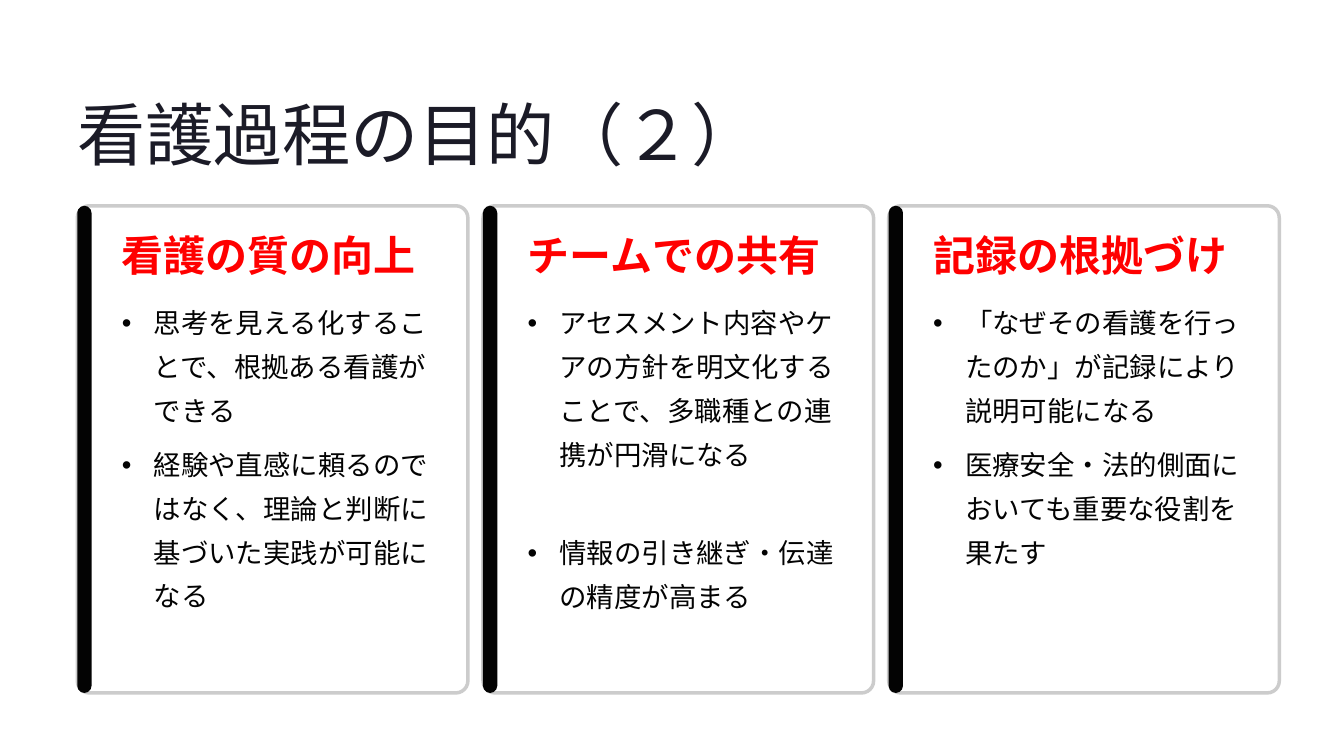
from dataclasses import dataclass

from lxml.etree import SubElement
from pptx import Presentation
from pptx.dml.color import RGBColor
from pptx.enum.shapes import MSO_SHAPE
from pptx.enum.text import MSO_ANCHOR, MSO_AUTO_SIZE, PP_ALIGN
from pptx.oxml.ns import qn
from pptx.shapes.autoshape import Shape
from pptx.slide import Slide
from pptx.text.text import TextFrame
from pptx.util import Inches, Pt

COLORS = {"title": "1B1B27", "heading": "FF0000", "ink": "030303",
          "card": "FFFFFF", "border": "CCCCCC"}
CARD_LEFT, CARD_TOP, CARD_PITCH = 0.92, 2.45, 4.83
CARD_WIDTH, CARD_HEIGHT, BAR_WIDTH = 4.65, 5.8, 0.17
TEXT_INSET, TEXT_WIDTH = 0.53, 3.72


@dataclass(frozen=True)
class TextStyle:
    font: str
    size: float
    line: float
    color: str
    bold: bool = False


@dataclass(frozen=True)
class Card:
    heading: str
    points: tuple[str, ...]
    gap: float
    placeholder: int


TITLE = TextStyle("Inter", 58.5, 73.5, "title")
HEADING = TextStyle("Inter", 36, 36.5, "heading", True)
BODY = TextStyle("Cabin", 23.5, 37.5, "ink")

CARDS = (
    Card("看護の質の向上",
         ("思考を見える化することで、根拠ある看護ができる",
          "経験や直感に頼るのではなく、理論と判断に基づいた実践が可能になる"), 9, 1),
    Card("チームでの共有",
         ("アセスメント内容やケアの方針を明文化することで、多職種との連携が円滑になる",
          "情報の引き継ぎ・伝達の精度が高まる"), 47, 2),
    Card("記録の根拠づけ",
         ("「なぜその看護を行ったのか」が記録により説明可能になる",
          "医療安全・法的側面においても重要な役割を果たす"), 9, 4),
)


def rgb(name: str) -> RGBColor:
    """Return the named palette colour."""
    return RGBColor.from_string(COLORS[name])


def place(box: Shape, left: float, top: float, width: float, height: float) -> None:
    """Move and size a box, in inches."""
    box.left, box.top = Inches(left), Inches(top)
    box.width, box.height = Inches(width), Inches(height)


def write(frame: TextFrame, lines: tuple[str, ...], style: TextStyle,
          gap: float = 0, bullets: bool = False) -> None:
    """Fill a text frame with styled paragraphs, gap points apart."""
    frame.margin_left = frame.margin_right = frame.margin_top = frame.margin_bottom = 0
    frame.word_wrap = True
    frame.auto_size = MSO_AUTO_SIZE.NONE
    frame.vertical_anchor = MSO_ANCHOR.TOP
    frame.text = "\n".join(lines)
    for index, para in enumerate(frame.paragraphs):
        para.alignment = PP_ALIGN.LEFT
        para.line_spacing = Pt(style.line)
        para.space_before = Pt(gap if index else 0)
        para.space_after = Pt(0)
        if bullets:
            add_bullet(para._p.get_or_add_pPr())
        para.font.name = style.font
        para.font.size = Pt(style.size)
        para.font.bold = style.bold
        para.font.color.rgb = rgb(style.color)


def add_bullet(properties) -> None:
    """Give paragraph properties a round bullet with a hanging indent."""
    properties.set("marL", str(Inches(0.38)))
    properties.set("indent", str(-Inches(0.38)))
    SubElement(properties, qn("a:buFont")).set("typeface", "Arial")
    SubElement(properties, qn("a:buChar")).set("char", "•")


def add_panel(page: Slide, left: float, width: float, fill: str, rounding: float) -> Shape:
    """Draw a rounded panel of card height without an outline."""
    panel = page.shapes.add_shape(MSO_SHAPE.ROUNDED_RECTANGLE, Inches(left),
                                  Inches(CARD_TOP), Inches(width), Inches(CARD_HEIGHT))
    panel.adjustments[0] = rounding
    panel.shadow.inherit = False
    panel.fill.solid()
    panel.fill.fore_color.rgb = rgb(fill)
    panel.line.fill.background()
    return panel


def add_card(page: Slide, card: Card, left: float) -> None:
    """Draw a card with its side bar, heading and bulleted list."""
    panel = add_panel(page, left, CARD_WIDTH, "card", 0.031)
    color = panel.fill._xPr.find(f".//{qn('a:srgbClr')}")
    SubElement(color, qn("a:alpha")).set("val", "95000")
    panel.line.color.rgb = rgb("border")
    panel.line.width = Pt(3)
    add_panel(page, left, BAR_WIDTH, "ink", 0.5)

    text_left = left + TEXT_INSET
    heading = page.shapes.add_textbox(Inches(text_left), Inches(2.82),
                                      Inches(TEXT_WIDTH), Inches(0.57))
    write(heading.text_frame, (card.heading,), HEADING)
    body = page.placeholders[card.placeholder]
    place(body, text_left, 3.52, TEXT_WIDTH, 4.02)
    write(body.text_frame, card.points, BODY, card.gap, bullets=True)
    page.shapes.element.append(body.element)


def main() -> None:
    """Build and save the slide."""
    deck = Presentation()
    deck.slide_width, deck.slide_height = Inches(16), Inches(9)
    page = deck.slides.add_slide(deck.slide_layouts.get_by_name("Comparison"))
    title = page.shapes.title
    place(title, CARD_LEFT, 1.05, 8.18, 1.02)
    write(title.text_frame, ("看護過程の目的（２）",), TITLE)
    for index, card in enumerate(CARDS):
        add_card(page, card, CARD_LEFT + index * CARD_PITCH)
    spare = page.placeholders[3].element
    spare.getparent().remove(spare)
    deck.save("out.pptx")


if __name__ == "__main__":
    main()
